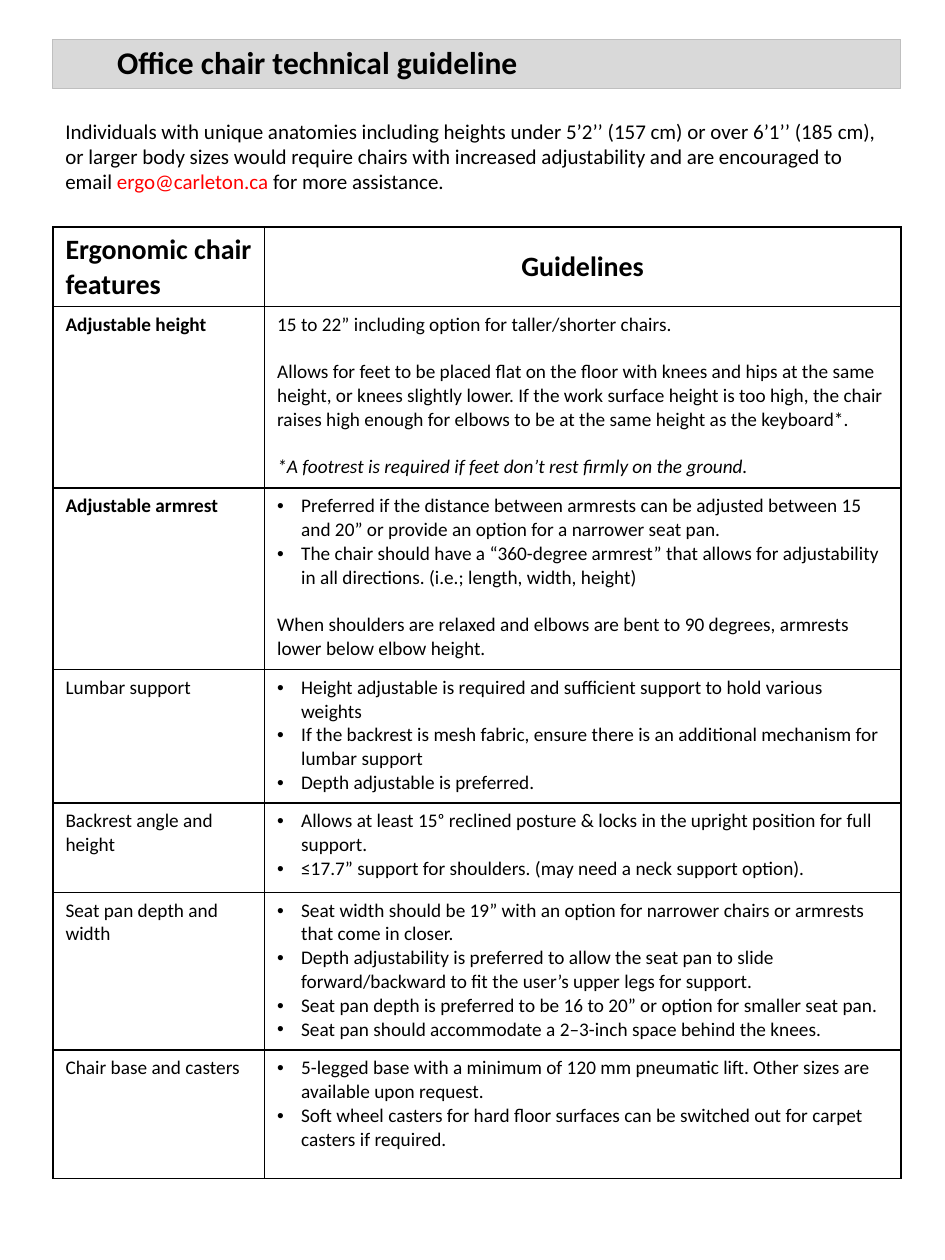
from lxml.etree import SubElement
from pptx import Presentation
from pptx.dml.color import RGBColor
from pptx.enum.shapes import MSO_SHAPE
from pptx.enum.text import MSO_ANCHOR, MSO_AUTO_SIZE, PP_ALIGN
from pptx.oxml.ns import qn
from pptx.util import Inches, Pt

BLACK = RGBColor(0x00, 0x00, 0x00)
RED = RGBColor(0xFF, 0x00, 0x00)
BAR_GREY = RGBColor(0xD9, 0xD9, 0xD9)
BAR_EDGE = RGBColor(0xBF, 0xBF, 0xBF)
FONT = "Calibri"
LEFT, WIDTH = Inches(0.42), Inches(6.73)
LINE_GAP = Pt(13.4)

# Each guideline is (kind, text); a "gap" kind stands one line below the text above.
FEATURES = [
    ("Adjustable height", True, 1.44, [
        ("plain", "15 to 22” including option for taller/shorter chairs."),
        ("gap", "Allows for feet to be placed flat on the floor with knees and hips at the same "
                "height, or knees slightly lower. If the work surface height is too high, the chair "
                "raises high enough for elbows to be at the same height as the keyboard*."),
        ("gap italic", "*A footrest is required if feet don’t rest firmly on the ground."),
    ]),
    ("Adjustable armrest", True, 1.44, [
        ("bullet", "Preferred if the distance between armrests can be adjusted between 15 and 20” "
                   "or provide an option for a narrower seat pan."),
        ("bullet", "The chair should have a “360-degree armrest” that allows for adjustability in "
                   "all directions. (i.e.; length, width, height)"),
        ("gap", "When shoulders are relaxed and elbows are bent to 90 degrees, armrests lower "
                "below elbow height."),
    ]),
    ("Lumbar support", False, 1.06, [
        ("bullet", "Height adjustable is required and sufficient support to hold various weights"),
        ("bullet", "If the backrest is mesh fabric, ensure there is an additional mechanism for "
                   "lumbar support"),
        ("bullet", "Depth adjustable is preferred."),
    ]),
    ("Backrest angle and height", False, 0.71, [
        ("bullet", "Allows at least 15ᵒ reclined posture & locks in the upright position for full "
                   "support."),
        ("bullet", "≤17.7” support for shoulders. (may need a neck support option)."),
    ]),
    ("Seat pan depth and width", False, 1.25, [
        ("bullet", "Seat width should be 19” with an option for narrower chairs or armrests that "
                   "come in closer."),
        ("bullet", "Depth adjustability is preferred to allow the seat pan to slide "
                   "forward/backward to fit the user’s upper legs for support."),
        ("bullet", "Seat pan depth is preferred to be 16 to 20” or option for smaller seat pan."),
        ("bullet", "Seat pan should accommodate a 2–3-inch space behind the knees."),
    ]),
    ("Chair base and casters", False, 1.02, [
        ("bullet", "5-legged base with a minimum of 120 mm pneumatic lift. Other sizes are "
                   "available upon request."),
        ("bullet", "Soft wheel casters for hard floor surfaces can be switched out for carpet "
                   "casters if required."),
    ]),
]


def style(paragraph, size, bold=False, italic=False):
    """Set the font of a whole paragraph."""
    font = paragraph.font
    font.name, font.size, font.bold, font.italic = FONT, Pt(size), bold, italic
    font.color.rgb = BLACK


def add_bullet(paragraph):
    properties = paragraph._p.get_or_add_pPr()
    properties.set("marL", str(Inches(0.19)))
    properties.set("indent", str(-Inches(0.19)))
    SubElement(properties, qn("a:buFont"), typeface="Arial")
    SubElement(properties, qn("a:buChar"), char="•")


presentation = Presentation()
presentation.slide_width, presentation.slide_height = Inches(7.5), Inches(10)
slide = presentation.slides.add_slide(presentation.slide_layouts[5])

# Title on a grey bar, the bar sent to the back
title_bar = slide.shapes.add_shape(MSO_SHAPE.RECTANGLE, LEFT, Inches(0.31), WIDTH, Inches(0.39))
title_bar.shadow.inherit = False
title_bar.fill.solid()
title_bar.fill.fore_color.rgb = BAR_GREY
title_bar.line.color.rgb = BAR_EDGE
title_bar.line.width = Pt(0.5)
slide.shapes._spTree.insert(2, title_bar._element)

title = slide.shapes.title
title.left, title.top, title.width, title.height = map(Inches, (0.83, 0.29, 5.4, 0.4))
title.text_frame.text = "Office chair technical guideline"
title.text_frame.vertical_anchor = MSO_ANCHOR.TOP
title.text_frame.auto_size = MSO_AUTO_SIZE.SHAPE_TO_FIT_TEXT
title.text_frame.paragraphs[0].alignment = PP_ALIGN.LEFT
style(title.text_frame.paragraphs[0], 18, bold=True)

# Guideline table
row_count = len(FEATURES) + 1
table = slide.shapes.add_table(row_count, 2, LEFT, Inches(1.8), WIDTH, Inches(7.55)).table
table.first_row = table.horz_banding = False
table.columns[0].width, table.columns[1].width = Inches(1.68), Inches(5.05)
for cell in table.iter_cells():
    cell_properties = cell._tc.get_or_add_tcPr()
    for side in ("lnL", "lnR", "lnT", "lnB"):
        border = SubElement(cell_properties, qn(f"a:{side}"), w=str(Pt(1)))
        border_fill = SubElement(border, qn("a:solidFill"))
        SubElement(border_fill, qn("a:srgbClr"), val=str(BLACK))
    cell.fill.background()

table.rows[0].height = Inches(0.63)
for column, heading in enumerate(("Ergonomic chair features", "Guidelines")):
    heading_cell = table.cell(0, column)
    heading_cell.text = heading
    style(heading_cell.text_frame.paragraphs[0], 16, bold=True)
guidelines_heading = table.cell(0, 1)
guidelines_heading.vertical_anchor = MSO_ANCHOR.MIDDLE
guidelines_heading.text_frame.paragraphs[0].alignment = PP_ALIGN.CENTER

for row, (feature, required, height, guidelines) in enumerate(FEATURES, start=1):
    table.rows[row].height = Inches(height)
    feature_cell = table.cell(row, 0)
    feature_cell.text = feature
    style(feature_cell.text_frame.paragraphs[0], 11, bold=required)

    guideline_frame = table.cell(row, 1).text_frame
    for index, (kind, guideline) in enumerate(guidelines):
        paragraph = guideline_frame.add_paragraph() if index else guideline_frame.paragraphs[0]
        paragraph.text = guideline
        if kind == "bullet":
            add_bullet(paragraph)
        if "gap" in kind:
            paragraph.space_before = LINE_GAP
        style(paragraph, 11, italic="italic" in kind)

# Introduction
introduction = slide.shapes.add_textbox(LEFT, Inches(0.89), WIDTH, Inches(0.71)).text_frame
introduction.word_wrap = True
introduction.auto_size = MSO_AUTO_SIZE.SHAPE_TO_FIT_TEXT
introduction_paragraph = introduction.paragraphs[0]
for words, color in (
    ("Individuals with unique anatomies including heights under 5’2’’ (157 cm) or over 6’1’’ "
     "(185 cm), or larger body sizes would require chairs with increased adjustability and are "
     "encouraged to email ", BLACK),
    ("ergo@carleton.ca ", RED),
    ("for more assistance.", BLACK),
):
    run = introduction_paragraph.add_run()
    run.text = words
    run.font.color.rgb = color
style(introduction_paragraph, 12)

presentation.save("out.pptx")
